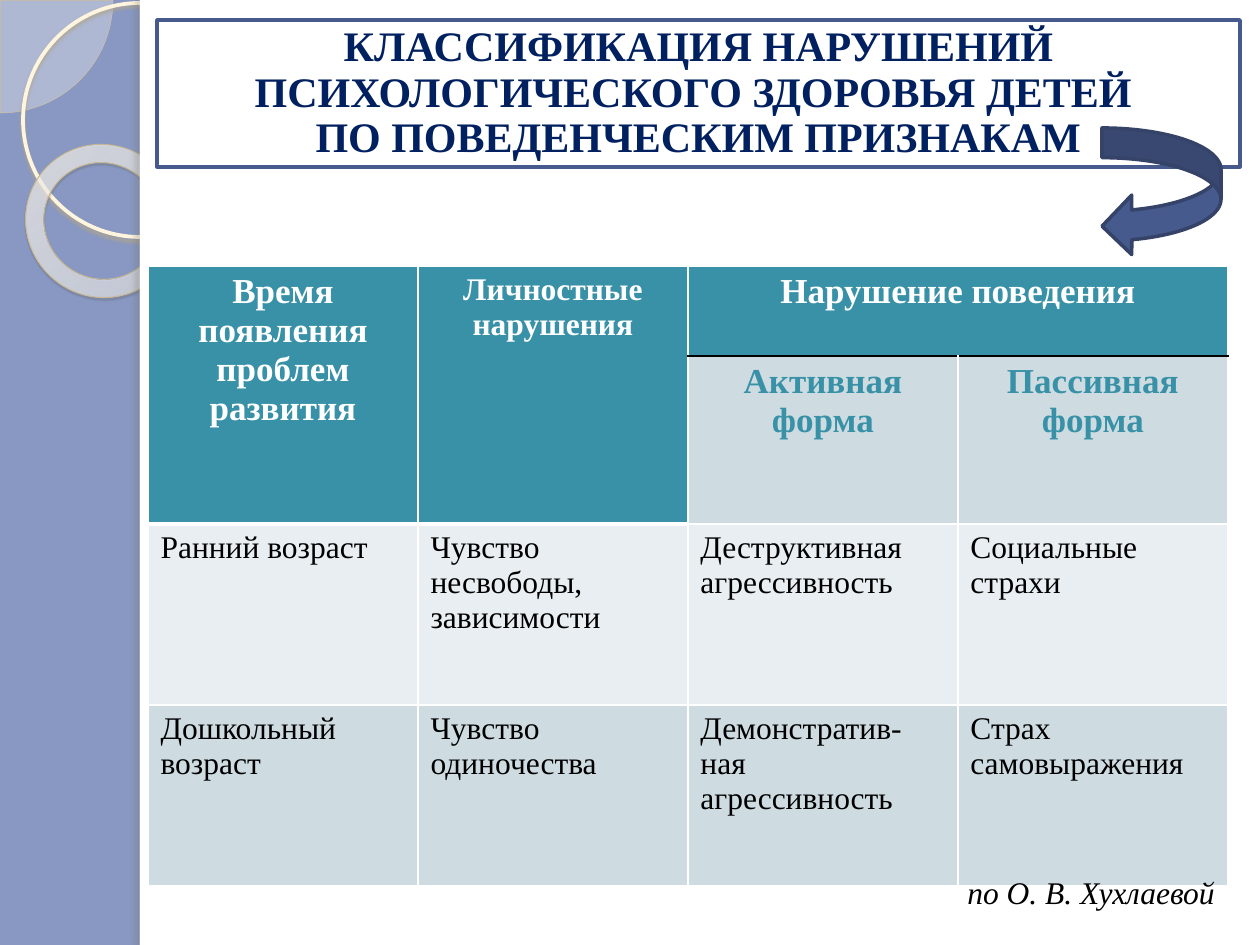
from lxml.etree import SubElement
from pptx import Presentation
from pptx.dml.color import RGBColor
from pptx.enum.shapes import MSO_SHAPE as Shape
from pptx.enum.text import MSO_ANCHOR as Anchor, MSO_AUTO_SIZE as AutoSize, PP_ALIGN as Align
from pptx.oxml import parse_xml
from pptx.oxml.ns import nsdecls, qn
from pptx.util import Emu, Pt

PX = 914400 / 126
FONT = "Times New Roman"

WHITE = RGBColor(0xFF, 0xFF, 0xFF)
BLACK = RGBColor(0, 0, 0)
SIDEBAR = RGBColor(0x88, 0x98, 0xC3)
NAVY = RGBColor(0x00, 0x20, 0x60)
BLUE = RGBColor(0x47, 0x5A, 0x8D)
DARK_BLUE = RGBColor(0x35, 0x43, 0x68)
TEAL = RGBColor(0x38, 0x91, 0xA7)
BAND_DARK = RGBColor(0xCE, 0xDC, 0xE1)
BAND_LIGHT = RGBColor(0xE8, 0xEE, 0xF1)
CREAM = RGBColor(0xFE, 0xFA, 0xF4)
CREAM_LINE = RGBColor(0xFF, 0xF5, 0xDE)
SAND = RGBColor(0xD3, 0xC3, 0x9F)
DARK_SAND = RGBColor(0xC7, 0xB8, 0x93)
RING_SHADOW = RGBColor(0xB0, 0xA6, 0x8F)
DONUT_SHADOW = RGBColor(0x5A, 0x54, 0x44)
PANEL_SHADOW = RGBColor(0x73, 0x6F, 0x63)
DONUT_STOPS = [
    (0, RGBColor(0xFF, 0xFC, 0xF6), 70),
    (70, RGBColor(0xFF, 0xFE, 0xFB), 55),
    (100, RGBColor(0xF0, 0xD2, 0x8E), 60),
]

TITLE = "КЛАССИФИКАЦИЯ НАРУШЕНИЙ ПСИХОЛОГИЧЕСКОГО ЗДОРОВЬЯ ДЕТЕЙ \vПО ПОВЕДЕНЧЕСКИМ ПРИЗНАКАМ"
CREDIT = "по О. В. Хухлаевой"
ROWS = [
    ["Время появления проблем развития", "Личностные нарушения", "Нарушение поведения", ""],
    ["", "", "Активная форма", "Пассивная форма"],
    ["Ранний возраст", "Чувство несвободы, зависимости", "Деструктивная агрессивность", "Социальные страхи"],
    ["Дошкольный возраст", "Чувство одиночества", "Демонстратив-ная агрессивность", "Страх самовыражения"],
]
MERGES = [((0, 0), (1, 0)), ((0, 1), (1, 1)), ((0, 2), (0, 3))]
ROW_HEIGHTS = [90, 90, 181, 181]
COLUMN_WIDTH = 270


def px(*values):
    return [Emu(round(value * PX)) for value in values]


def write(text_frame, text, size, color=BLACK, align=Align.LEFT, bold=False, italic=False, spacing=None):
    text_frame.text = text
    paragraph = text_frame.paragraphs[0]
    paragraph.alignment = align
    paragraph.line_spacing = spacing
    for run in paragraph.runs:
        font = run.font
        font.name, font.size, font.bold, font.italic = FONT, Pt(size), bold, italic
        font.color.rgb = color


def outline(shape, color, width):
    shape.line.color.rgb = color
    shape.line.width = Pt(width)


def add_alpha(color_element, percent):
    SubElement(color_element, qn("a:alpha"), val=str(percent * 1000))


def add_shape(kind, box, fill=None, line=None, adjustments=(), alpha=None, shadow=None):
    shape = slide.shapes.add_shape(kind, *px(*box))
    shape.shadow.inherit = False
    for index, value in enumerate(adjustments):
        shape.adjustments[index] = value
    if fill is None:
        shape.fill.background()
    else:
        shape.fill.solid()
        shape.fill.fore_color.rgb = fill
    if alpha is not None:
        add_alpha(shape._element.spPr.find(f"{qn('a:solidFill')}/{qn('a:srgbClr')}"), alpha)
    if line:
        outline(shape, *line)
    else:
        shape.line.fill.background()
    if shadow:
        color, opacity, blur, distance, angle = shadow
        effects = shape._element.spPr.find(qn("a:effectLst"))
        outer = SubElement(effects, qn("a:outerShdw"), blurRad=str(Pt(blur)), dist=str(Pt(distance)),
                           dir=str(angle * 60000), algn="ctr", rotWithShape="0")
        add_alpha(SubElement(outer, qn("a:srgbClr"), val=str(color)), opacity)
    return shape


def fill_radial(shape, stops):
    stop_xml = "".join(
        f'<a:gs pos="{position * 1000}"><a:srgbClr val="{color}">'
        f'<a:alpha val="{alpha * 1000}"/></a:srgbClr></a:gs>'
        for position, color, alpha in stops
    )
    gradient = parse_xml(
        f'<a:gradFill {nsdecls("a")} rotWithShape="1"><a:gsLst>{stop_xml}</a:gsLst>'
        '<a:path path="circle"><a:fillToRect l="-408000" t="-50000" r="508000" b="150000"/></a:path>'
        '</a:gradFill>'
    )
    properties = shape._element.spPr
    properties.replace(properties.find(qn("a:noFill")), gradient)


def border_cell(cell, **changes):
    properties = cell._tc.get_or_add_tcPr()
    for position, side in enumerate("LRTB"):
        color, width = changes.get(side, (WHITE, 1))
        properties.insert(position, parse_xml(
            f'<a:ln{side} {nsdecls("a")} w="{Pt(width)}"><a:solidFill>'
            f'<a:srgbClr val="{color}"/></a:solidFill></a:ln{side}>'
        ))


def cell_style(row, column):
    if row < 2 and (row == 0 or column < 2):
        size = 18 if column == 1 else 20
        borders = {"B": (WHITE, 3) if column < 2 else (BLACK, 1)}
        return TEAL, dict(size=size, color=WHITE, align=Align.CENTER, bold=True), borders
    if row == 1:
        return BAND_DARK, dict(size=20, color=TEAL, align=Align.CENTER, bold=True), {"T": (BLACK, 1)}
    band = BAND_LIGHT if row == 2 else BAND_DARK
    borders = {"T": (WHITE, 3)} if row == 2 and column < 2 else {}
    return band, dict(size=18, align=Align.JUSTIFY), borders


presentation = Presentation()
presentation.slide_width, presentation.slide_height = px(1260, 945)
slide = presentation.slides.add_slide(presentation.slide_layouts[5])
slide.background.fill.solid()
slide.background.fill.fore_color.rgb = SIDEBAR

add_shape(Shape.PIE, (-112, -112, 225, 225), CREAM, (SAND, 0.25), (0, 54.02), alpha=33)
add_shape(Shape.OVAL, (23, 3, 234, 234), line=(CREAM_LINE, 2.15), shadow=(RING_SHADOW, 85, 2, 2, 90))
donut = add_shape(Shape.DONUT, (25, 145, 155, 152), line=(DARK_SAND, 0.58), adjustments=(0.12,),
                  shadow=(DONUT_SHADOW, 35, 1, 1.2, 75))
donut.rotation = 38.6
fill_radial(donut, DONUT_STOPS)
add_shape(Shape.RECTANGLE, (140, 0, 1120, 945), WHITE)
add_shape(Shape.RECTANGLE, (140, 0, 10, 945), WHITE, shadow=(PANEL_SHADOW, 25, 3, 3, 180))

title = slide.shapes.title
slide.shapes._spTree.append(title._element)
title.left, title.top, title.width, title.height = px(157, 20, 1083, 147)
title.fill.solid()
title.fill.fore_color.rgb = WHITE
outline(title, BLUE, 2)
write(title.text_frame, TITLE, 24, NAVY, Align.CENTER, bold=True, spacing=0.9)
title.text_frame.vertical_anchor = Anchor.MIDDLE
title.text_frame.auto_size = AutoSize.NONE

table_box = px(148, 266, COLUMN_WIDTH * len(ROWS[0]), sum(ROW_HEIGHTS))
table = slide.shapes.add_table(len(ROWS), len(ROWS[0]), *table_box).table
table.first_row = table.horz_banding = False
for column in table.columns:
    column.width, = px(COLUMN_WIDTH)
for row_index, (texts, height) in enumerate(zip(ROWS, ROW_HEIGHTS)):
    table.rows[row_index].height, = px(height)
    for column_index, text in enumerate(texts):
        cell = table.cell(row_index, column_index)
        fill, text_format, borders = cell_style(row_index, column_index)
        cell.fill.solid()
        cell.fill.fore_color.rgb = fill
        border_cell(cell, **borders)
        if text:
            write(cell.text_frame, text, **text_format)
for first, last in MERGES:
    table.cell(*first).merge(table.cell(*last))

add_shape(Shape.CURVED_LEFT_ARROW, (1102, 128, 119, 128), BLUE, (DARK_BLUE, 2))
credit = slide.shapes.add_textbox(*px(955, 867, 276, 50)).text_frame
write(credit, CREDIT, 18, italic=True)
credit.word_wrap = False
credit.auto_size = AutoSize.SHAPE_TO_FIT_TEXT

presentation.save("out.pptx")
